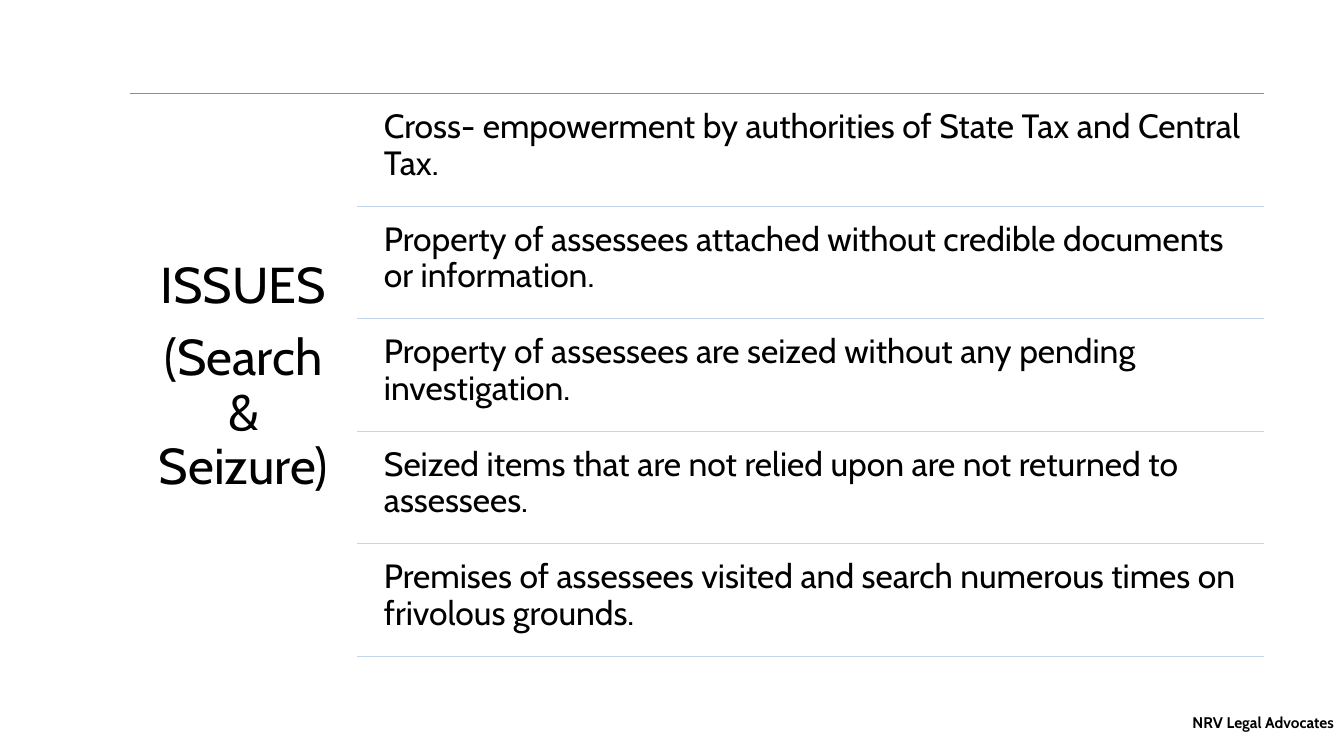
from lxml.etree import SubElement
from pptx import Presentation
from pptx.dml.color import RGBColor
from pptx.enum.shapes import MSO_CONNECTOR
from pptx.enum.text import MSO_ANCHOR, MSO_AUTO_SIZE, PP_ALIGN
from pptx.oxml.ns import qn
from pptx.util import Inches, Pt

ISSUES = [
    "Cross- empowerment by authorities of State Tax and Central Tax.",
    "Property of assessees attached without credible documents or information.",
    "Property of assessees are seized without any pending investigation.",
    "Seized items that are not relied upon are not returned to assessees.",
    "Premises of assessees visited and search numerous times on frivolous grounds.",
]
TOP, RIGHT = 0.93, 12.54
ROW_HEIGHT = 5.58 / len(ISSUES)


def color(value):
    return RGBColor.from_string(value)


class IssuesPage:
    """Draws ruled text rows on one slide in a shared style."""

    font_name = "Cabin"
    ink = "000000"
    accent = "5B9BD5"
    pale = "C4D5EB"

    def __init__(self, page):
        self.page = page

    def place(self, box, left, top, width, height):
        box.left, box.top = Inches(left), Inches(top)
        box.width, box.height = Inches(width), Inches(height)

    def fill_text(self, box, lines, size, align=PP_ALIGN.LEFT, inset=0.1,
                  anchor=MSO_ANCHOR.TOP, bold=False):
        frame = box.text_frame
        frame.text = "\n".join(lines)
        frame.word_wrap = True
        frame.auto_size = MSO_AUTO_SIZE.NONE
        frame.vertical_anchor = anchor
        frame.margin_left = frame.margin_right = Inches(inset)
        frame.margin_top = frame.margin_bottom = Inches(inset)
        for para in frame.paragraphs:
            para.alignment = align
            para.line_spacing = 0.9
            para.space_before = Pt(0)
            para.space_after = Pt(size * 0.35)
            para.font.name = self.font_name
            para.font.size = Pt(size)
            para.font.bold = bold
            para.font.color.rgb = color(self.ink)
        return frame

    def title(self, lines, left, top, width, height):
        box = self.page.shapes.title
        self.place(box, left, top, width, height)
        self.fill_text(box, lines, 36, PP_ALIGN.CENTER, 0.15, MSO_ANCHOR.MIDDLE)

    def text(self, line, left, top, width, height, size, **style):
        box = self.page.shapes.add_textbox(
            Inches(left), Inches(top), Inches(width), Inches(height))
        return self.fill_text(box, [line], size, **style)

    def rule(self, left, y, stroke):
        line = self.page.shapes.add_connector(
            MSO_CONNECTOR.STRAIGHT, Inches(left), Inches(y), Inches(RIGHT), Inches(y))
        line.line.color.rgb = color(stroke)
        line.line.width = Pt(0.5)
        SubElement(line._element.spPr, qn("a:effectLst"))

    def footer(self, line):
        frame = self.text(line, 11.65, 7.03, 1.68, 0.47, 11,
                          align=PP_ALIGN.RIGHT, bold=True)
        frame.margin_top = frame.margin_bottom = Inches(0.05)
        frame.paragraphs[0].line_spacing = 1.0
        frame.paragraphs[0].space_after = Pt(0)


def main():
    deck = Presentation()
    deck.slide_width, deck.slide_height = Inches(13.33), Inches(7.5)
    issues = IssuesPage(deck.slides.add_slide(deck.slide_layouts.get_by_name("Title Only")))
    issues.rule(1.29, TOP, issues.accent)
    issues.title(["ISSUES", "(Search & Seizure)"], 1.29, TOP, 2.25, 5.64)
    for row, issue in enumerate(ISSUES):
        row_top = TOP + row * ROW_HEIGHT
        issues.text(issue, 3.71, row_top + 0.06, 8.83, 1.06, 24)
        issues.rule(3.54, row_top + ROW_HEIGHT, issues.pale)
    issues.footer("NRV Legal Advocates")
    deck.save("out.pptx")


if __name__ == "__main__":
    main()
